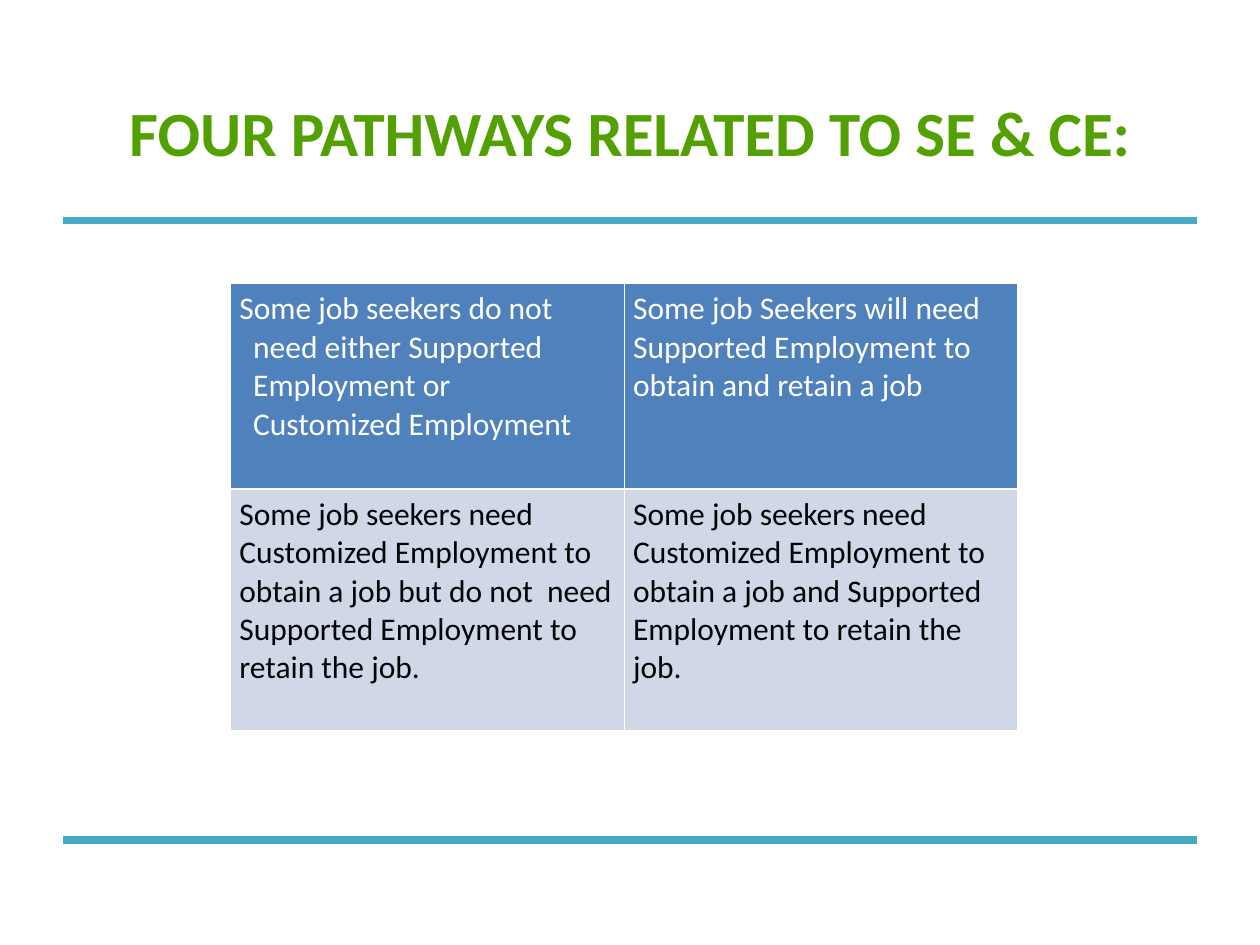
from lxml.etree import SubElement
from pptx import Presentation
from pptx.dml.color import RGBColor
from pptx.enum.shapes import MSO_CONNECTOR
from pptx.enum.text import MSO_ANCHOR, PP_ALIGN
from pptx.oxml.ns import qn
from pptx.util import Inches, Pt

GREEN = RGBColor(0x53, 0xA0, 0x02)
TEAL = RGBColor(0x46, 0xAA, 0xC5)
BLUE = RGBColor(0x4F, 0x81, 0xBD)
PALE = RGBColor(0xD0, 0xD8, 0xE8)
WHITE = RGBColor(0xFF, 0xFF, 0xFF)
INK = RGBColor(0x03, 0x04, 0x05)

PATHWAYS = [
    ["Some job seekers do not\nneed either Supported\nEmployment or\nCustomized Employment",
     "Some job Seekers will need Supported Employment to obtain and retain a job"],
    ["Some job seekers need Customized Employment to obtain a job but do not  need "
     "Supported Employment to retain the job.",
     "Some job seekers need Customized Employment to obtain a job and "
     "Supported Employment to retain the job."],
]
ROW_STYLES = [(BLUE, WHITE), (PALE, INK)]


class SlideBuilder:
    font = "Calibri"
    title_size = Pt(36)
    body_size = Pt(18)
    rule_width = Pt(4.5)
    border_width = Pt(1)
    hang = Inches(0.11)

    def __init__(self, slide):
        self.s = slide

    def format_run(self, r, size, color, bold=False):
        r.font.name, r.font.size, r.font.bold = self.font, size, bold
        r.font.color.rgb = color

    def title(self, text, left, top, width, height):
        sp = self.s.shapes.title
        sp.left, sp.top = Inches(left), Inches(top)
        sp.width, sp.height = Inches(width), Inches(height)
        tf = sp.text_frame
        tf.text = text
        tf.vertical_anchor = MSO_ANCHOR.MIDDLE
        p = tf.paragraphs[0]
        p.alignment = PP_ALIGN.CENTER
        self.format_run(p.runs[0], self.title_size, GREEN, bold=True)

    def rule(self, left, right, y):
        line = self.s.shapes.add_connector(
            MSO_CONNECTOR.STRAIGHT, Inches(left), Inches(y), Inches(right), Inches(y))
        line.line.color.rgb = TEAL
        line.line.width = self.rule_width
        SubElement(line._element.spPr, qn("a:effectLst"))

    def borders(self, cell):
        tcPr = cell._tc.get_or_add_tcPr()
        for side in ("lnL", "lnR", "lnT", "lnB"):
            ln = SubElement(tcPr, qn(f"a:{side}"), w=str(self.border_width))
            fill = SubElement(ln, qn("a:solidFill"))
            SubElement(fill, qn("a:srgbClr"), val=str(WHITE))

    def cell(self, cell, text, fill, color):
        self.borders(cell)
        cell.fill.solid()
        cell.fill.fore_color.rgb = fill
        cell.margin_left = cell.margin_right = Inches(0.07)
        cell.margin_top = cell.margin_bottom = Inches(0.05)
        cell.text_frame.text = text
        for i, p in enumerate(cell.text_frame.paragraphs):
            if i:  # lines after the first are set in
                p._p.get_or_add_pPr().set("marL", str(self.hang))
            self.format_run(p.runs[0], self.body_size, color)

    def table(self, rows, styles, left, top, width, heights):
        table = self.s.shapes.add_table(
            len(rows), len(rows[0]), Inches(left), Inches(top),
            Inches(width), Inches(sum(heights))).table
        for i, (texts, (fill, color)) in enumerate(zip(rows, styles)):
            table.rows[i].height = Inches(heights[i])
            for j, text in enumerate(texts):
                self.cell(table.cell(i, j), text, fill, color)


def main():
    prs = Presentation()
    prs.slide_width, prs.slide_height = Inches(10), Inches(7.5)
    builder = SlideBuilder(prs.slides.add_slide(prs.slide_layouts[5]))

    # Rules above and below the content
    for y in (1.75, 6.67):
        builder.rule(0.5, 9.5, y)

    # Heading
    builder.title("FOUR PATHWAYS RELATED TO SE & CE:", 0.5, 0.42, 9, 1.25)

    # Four pathways
    builder.table(PATHWAYS, ROW_STYLES, 1.83, 2.25, 6.25, (1.63, 1.92))

    prs.save("out.pptx")


if __name__ == "__main__":
    main()
